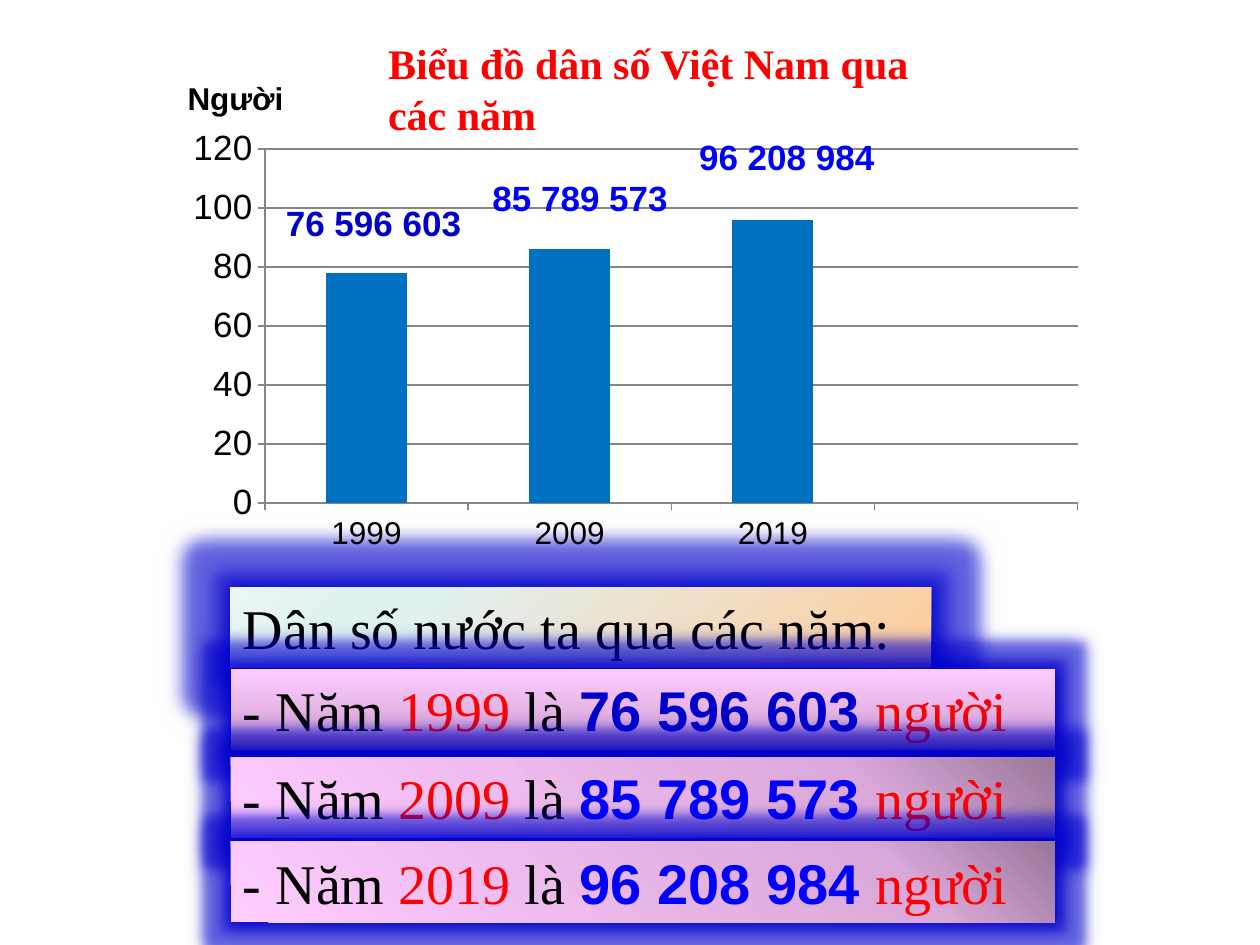
from dataclasses import dataclass

from lxml.etree import SubElement
from pptx import Presentation
from pptx.chart.data import CategoryChartData
from pptx.dml.color import RGBColor
from pptx.enum.chart import XL_CHART_TYPE as ChartType, XL_TICK_MARK as Tick
from pptx.enum.shapes import MSO_SHAPE as Preset
from pptx.enum.text import MSO_ANCHOR as Anchor, PP_ALIGN as Align
from pptx.oxml import parse_xml
from pptx.oxml.ns import nsdecls, qn
from pptx.util import Inches, Pt


@dataclass(frozen=True)
class Theme:
    serif: str = "Times New Roman"
    sans: str = "Arial"
    black: str = "000000"
    red: str = "FF0000"
    navy: str = "0000CC"
    blue: str = "0000FF"
    bar: str = "0070C0"
    grid: str = "868686"
    title_size: int = 24
    statement_size: int = 32
    label_size: int = 20
    axis_size: int = 18


THEME = Theme()
SUNRISE = [(0, "FFCC99"), (74, "E0F1F2"), (83, "E0F1F2"), (100, "EBF6F7")]
ORCHID = [(0, "997799"), (24, "DAA9DA"), (100, "FFCCFF")]
ORCHID_LATE = [(0, "997799"), (21, "DAA9DA"), (100, "FFCCFF")]
TOP_RIGHT = ('<a:path path="circle">'
             '<a:fillToRect l="100000" b="100000"/></a:path>')


def linear(degrees):
    return f'<a:lin ang="{degrees * 60000}" scaled="1"/>'


def style_font(font, size, color, family, bold=False):
    font.size, font.bold, font.name = Pt(size), bold, family
    font.color.rgb = RGBColor.from_string(color)


def place(element, tag, **fractions):
    """Set a manual chart layout, in fractions of the chart."""
    for old in element.findall(qn("c:layout")):
        element.remove(old)
    layout = parse_xml(f"<c:layout {nsdecls('c')}/>")
    manual = SubElement(layout, qn("c:manualLayout"))
    if tag == "plot":
        SubElement(manual, qn("c:layoutTarget")).set("val", "inner")
    for mode in ("xMode", "yMode"):
        SubElement(manual, qn(f"c:{mode}")).set("val", "edge")
    for name, value in fractions.items():
        SubElement(manual, qn(f"c:{name}")).set("val", str(value))
    text = element.find(qn("c:tx"))
    if text is None:
        element.insert(0, layout)
    else:
        text.addnext(layout)


class SlideBuilder:
    def __init__(self, slide, theme):
        self.slide, self.theme = slide, theme

    def add_runs(self, frame, runs, size):
        """Fill the first paragraph; a run is (text, colour, family, bold)."""
        frame.word_wrap = True
        paragraph = frame.paragraphs[0]
        paragraph.alignment = Align.LEFT
        for text, color, family, bold in runs:
            run = paragraph.add_run()
            run.text = text
            style_font(run.font, size, color, family, bold)

    def title(self, text, left, top, width, height):
        heading = self.slide.shapes.title
        heading.left, heading.top = Inches(left), Inches(top)
        heading.width, heading.height = Inches(width), Inches(height)
        heading.text_frame.vertical_anchor = Anchor.TOP
        self.add_runs(heading.text_frame,
                      [(text, self.theme.red, self.theme.serif, True)],
                      self.theme.title_size)

    def label(self, text, color, left, top):
        box = self.slide.shapes.add_textbox(
            Inches(left), Inches(top), Inches(1.64), Inches(0.44))
        self.add_runs(box.text_frame, [(text, color, self.theme.sans, True)],
                      self.theme.label_size)

    def statement(self, runs, left, top, width, stops, direction, glow):
        panel = self.slide.shapes.add_shape(
            Preset.RECTANGLE, Inches(left), Inches(top),
            Inches(width), Inches(0.64))
        panel.line.fill.background()
        marks = "".join(f'<a:gs pos="{at * 1000}"><a:srgbClr val="{color}"/>'
                        "</a:gs>" for at, color in stops)
        properties = panel._element.spPr
        properties.find(qn("a:prstGeom")).addnext(parse_xml(
            f'<a:gradFill {nsdecls("a")} rotWithShape="1">'
            f"<a:gsLst>{marks}</a:gsLst>{direction}</a:gradFill>"))
        properties.append(parse_xml(
            f'<a:effectLst {nsdecls("a")}><a:glow rad="{Pt(glow)}">'
            f'<a:srgbClr val="{self.theme.navy}"><a:alpha val="40000"/>'
            f'</a:srgbClr></a:glow><a:outerShdw blurRad="{Pt(8)}" dist="0" '
            f'algn="ctr"><a:srgbClr val="{self.theme.navy}"/>'
            "</a:outerShdw></a:effectLst>"))
        panel.text_frame.vertical_anchor = Anchor.MIDDLE
        self.add_runs(panel.text_frame, runs, self.theme.statement_size)

    def year_statement(self, year, count, color, *layout):
        serif, sans = self.theme.serif, self.theme.sans
        black, red = self.theme.black, self.theme.red
        self.statement([("- Năm ", black, serif, False),
                        (year, red, serif, False),
                        (" là ", black, serif, False),
                        (count + " ", color, sans, True),
                        ("người", red, serif, False)], *layout)

    def population_chart(self, years, millions):
        theme = self.theme
        data = CategoryChartData()
        data.categories = years
        data.add_series("Series 1", millions)
        chart = self.slide.shapes.add_chart(
            ChartType.COLUMN_CLUSTERED, Inches(1.37), Inches(0.37),
            Inches(7.33), Inches(4.07), data).chart
        style_font(chart.font, 10, theme.black, theme.sans)
        chart.has_legend = False
        chart.has_title = True
        unit = chart.chart_title.text_frame.paragraphs[0].add_run()
        unit.text = "Người "
        style_font(unit.font, theme.axis_size, theme.black, theme.sans, True)
        place(chart.chart_title._element, "title", x=0.01, y=0.05)

        plot = chart.plots[0]
        plot.gap_width, plot.vary_by_categories = 150, False
        fill = plot.series[0].format.fill
        fill.solid()
        fill.fore_color.rgb = RGBColor.from_string(theme.bar)
        gray = RGBColor.from_string(theme.grid)
        for axis, size in ((chart.category_axis, theme.axis_size),
                           (chart.value_axis, theme.label_size)):
            style_font(axis.tick_labels.font, size, theme.black, theme.sans)
            axis.major_tick_mark = Tick.OUTSIDE
            axis.format.line.color.rgb = gray
        scale = chart.value_axis
        scale.minimum_scale, scale.maximum_scale = 0, 120
        scale.major_unit = 20
        scale.major_gridlines.format.line.color.rgb = gray
        place(chart._chartSpace.chart.plotArea, "plot",
              x=0.1, y=0.2, w=0.88, h=0.69)


def main():
    deck = Presentation()
    deck.slide_width, deck.slide_height = Inches(10), Inches(7.5)
    builder = SlideBuilder(deck.slides.add_slide(deck.slide_layouts[5]), THEME)

    builder.statement(
        [("Dân số nước ta qua các năm:", THEME.black, THEME.serif, False)],
        1.83, 4.66, 5.56, SUNRISE, linear(225), 18)
    # year, people, colour, label position, statement top, gradient
    censuses = [
        ("1999", "76 596 603", THEME.navy, 2.17, 1.55, 5.31, ORCHID, linear(270)),
        ("2009", "85 789 573", THEME.blue, 3.81, 1.35, 6.01, ORCHID, TOP_RIGHT),
        ("2019", "96 208 984", THEME.blue, 5.45, 1.03, 6.68, ORCHID_LATE, TOP_RIGHT),
    ]
    for year, people, color, _, _, top, stops, direction in censuses:
        builder.year_statement(year, people, color, 1.83, top, 6.54,
                               stops, direction, 11)

    builder.population_chart([census[0] for census in censuses] + [""],
                             [78, 86, 96, None])
    for _, people, color, left, top, *_ in censuses:
        builder.label(people, color, left, top)
    builder.title("Biểu đồ dân số Việt Nam qua các năm", 2.98, 0.25, 4.6, 0.9)
    deck.save("out.pptx")


if __name__ == "__main__":
    main()
